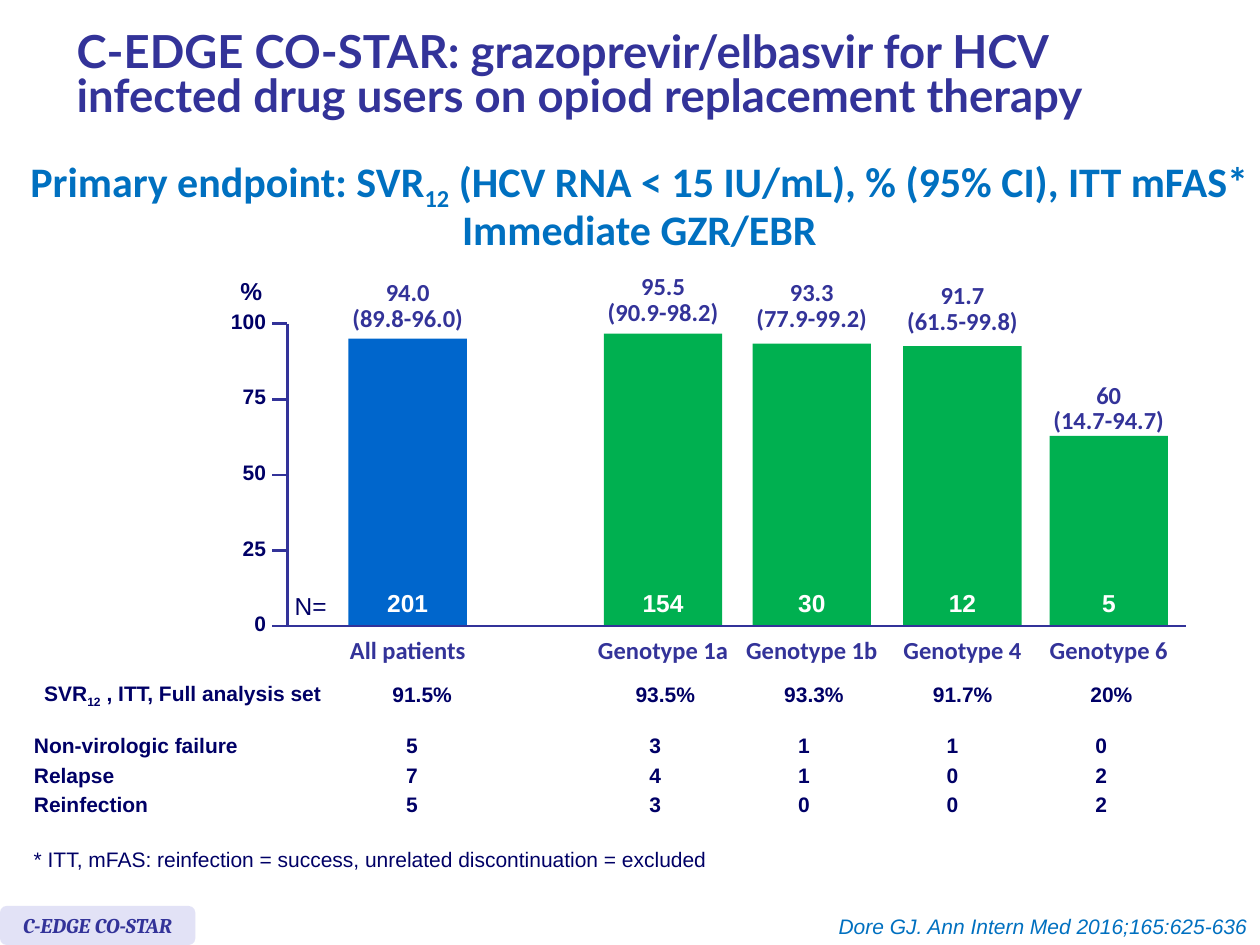
import pptx
import pptx.util
import pptx.dml.color
import pptx.enum.shapes
import pptx.enum.text
import pptx.oxml.ns
from lxml import etree

Pt = pptx.util.Pt
SHAPE = pptx.enum.shapes.MSO_SHAPE
ALIGN = pptx.enum.text.PP_ALIGN
ANCHOR = pptx.enum.text.MSO_ANCHOR
AUTO_SIZE = pptx.enum.text.MSO_AUTO_SIZE

INDIGO = "333399"
NAVY = "000066"
BLUE = "0070C0"
GREEN = "00B050"

AXIS_X = 164.2
AXIS_TOP = 185
TICK_STEP = 43.2
BASELINE = AXIS_TOP + 4 * TICK_STEP
BAR_WIDTH = 67.7
CATEGORY_WIDTH = 80

BARS = [
    ("All patients", "94.0", "(89.8-96.0)", "201", 233, 193.5, 160.4, "0066CC"),
    ("Genotype 1a", "95.5", "(90.9-98.2)", "154", 378.9, 190.7, 156.8, GREEN),
    ("Genotype 1b", "93.3", "(77.9-99.2)", "30", 463.9, 196.4, 160.4, GREEN),
    ("Genotype 4", "91.7", "(61.5-99.8)", "12", 550, 197.8, 162, GREEN),
    ("Genotype 6", "60", "(14.7-94.7)", "5", 633.6, 249.1, 218.9, GREEN),
]
SVR_ROWS = [
    [("SVR", "12", " , ITT, Full analysis set"), "91.5%", "", "93.5%", "93.3%", "91.7%", "20%"],
]
FAILURE_ROWS = [
    ["Non-virologic failure", "5", "", "3", "1", "1", "0"],
    ["Relapse", "7", "", "4", "1", "0", "2"],
    ["Reinfection", "5", "", "3", "0", "0", "2"],
]
COLUMN_WIDTHS = [175.7, 90.7, 51.1, 85, 85, 85, 85]
ROW_HEIGHT = 17.1


def color(hex_code):
    return pptx.dml.color.RGBColor.from_string(hex_code)


def write(paragraph, content, font, size, hex_code, bold=False, italic=False,
          align=ALIGN.LEFT, spacing=None):
    if isinstance(content, str):
        paragraph.text = content
    else:
        for index, part in enumerate(content):
            run = paragraph.add_run()
            run.text = part
            if index % 2:
                run.font._element.set("baseline", "-25000")
    paragraph.alignment = align
    if spacing:
        paragraph.line_spacing = Pt(spacing)
    for run in paragraph.runs:
        run.font.name = font
        run.font.size = Pt(size)
        run.font.bold = bold
        run.font.italic = italic
        run.font.color.rgb = color(hex_code)


def add_text(slide, left, top, width, height, lines, font, size, hex_code,
             inset=True, wrap=False, anchor=ANCHOR.TOP, **style):
    frame = slide.shapes.add_textbox(Pt(left), Pt(top), Pt(width), Pt(height)).text_frame
    frame.word_wrap = wrap
    frame.auto_size = AUTO_SIZE.NONE if wrap else AUTO_SIZE.SHAPE_TO_FIT_TEXT
    frame.vertical_anchor = anchor
    if not inset:
        frame.margin_left = frame.margin_right = 0
        frame.margin_top = frame.margin_bottom = 0
    for index, content in enumerate(lines):
        paragraph = frame.add_paragraph() if index else frame.paragraphs[0]
        write(paragraph, content, font, size, hex_code, **style)


def add_block(slide, preset, left, top, width, height, hex_code):
    block = slide.shapes.add_shape(preset, Pt(left), Pt(top), Pt(width), Pt(height))
    block.shadow.inherit = False
    block.fill.solid()
    block.fill.fore_color.rgb = color(hex_code)
    block.line.fill.background()
    return block


def add_line(slide, x1, y1, x2, y2):
    line = slide.shapes.add_connector(
        pptx.enum.shapes.MSO_CONNECTOR.STRAIGHT, Pt(x1), Pt(y1), Pt(x2), Pt(y2))
    line.line.color.rgb = color(INDIGO)
    line.line.width = Pt(1.5)
    etree.SubElement(line._element.spPr, pptx.oxml.ns.qn("a:effectLst"))


def add_results(slide, left, top, rows):
    results = slide.shapes.add_table(
        len(rows), len(COLUMN_WIDTHS), Pt(left), Pt(top),
        Pt(sum(COLUMN_WIDTHS)), Pt(ROW_HEIGHT * len(rows))).table
    results.first_row = results.horz_banding = False
    for column, width in zip(results.columns, COLUMN_WIDTHS):
        column.width = Pt(width)
    for row_index, row in enumerate(rows):
        results.rows[row_index].height = Pt(ROW_HEIGHT)
        for column_index, content in enumerate(row):
            cell = results.cell(row_index, column_index)
            cell.fill.background()
            cell.vertical_anchor = ANCHOR.MIDDLE
            cell.margin_left = cell.margin_right = Pt(5)
            cell.margin_top = cell.margin_bottom = 0
            paragraph = cell.text_frame.paragraphs[0]
            if content:
                write(paragraph, content, "Arial", 12, NAVY, bold=True,
                      align=ALIGN.CENTER if column_index else ALIGN.LEFT)
            else:
                paragraph._p.get_or_add_endParaRPr().set("sz", "1200")


def add_axes(slide):
    add_line(slide, AXIS_X, AXIS_TOP, AXIS_X, BASELINE)
    add_line(slide, AXIS_X, BASELINE, 677.5, BASELINE)
    for index, value in enumerate(range(100, -1, -25)):
        y = AXIS_TOP + index * TICK_STEP
        add_line(slide, AXIS_X - 8.7, y, AXIS_X, y)
        width = 6.7 * len(str(value))
        add_text(slide, 152 - width, y - 8.8, width, 14.4, [str(value)], "Arial", 12, NAVY,
                 inset=False, bold=True, align=ALIGN.RIGHT)
    add_text(slide, 130.3, 154.1, 27.4, 24.5, ["%"], "Arial", 14, NAVY, bold=True)
    add_text(slide, 161.3, 334.1, 38.2, 24.5, ["N="], "Arial", 14, NAVY, wrap=True)


def add_bar(slide, category, rate, interval, patients, center, top, label_top, hex_code):
    add_block(slide, SHAPE.RECTANGLE, center - BAR_WIDTH / 2, top,
              BAR_WIDTH, BASELINE - top, hex_code)
    centered = {"inset": False, "bold": True, "align": ALIGN.CENTER}
    add_text(slide, center - 32, label_top, 64, 30.2, [rate, interval],
             "Calibri", 14, INDIGO, spacing=14.8, **centered)
    add_text(slide, center - CATEGORY_WIDTH / 2, 362.9, CATEGORY_WIDTH, 17.3, [category],
             "Calibri", 14, INDIGO, **centered)
    width = 7.9 * len(patients)
    add_text(slide, center - width / 2, 336.2, width, 17.3, [patients],
             "Arial", 14, "FFFFFF", **centered)


def add_study_tag(slide):
    tag = add_block(slide, SHAPE.ROUNDED_RECTANGLE, 0, 517.7, 111.6, 22.3, "E2E2F6")
    tag.text_frame.word_wrap = False
    tag.text_frame.vertical_anchor = ANCHOR.MIDDLE
    write(tag.text_frame.paragraphs[0], "C-EDGE CO-STAR", "Cambria", 12, INDIGO,
          bold=True, italic=True, align=ALIGN.CENTER)


def main():
    deck = pptx.Presentation()
    deck.slide_width, deck.slide_height = Pt(720), Pt(540)
    slide = deck.slides.add_slide(deck.slide_layouts[6])

    add_text(slide, 36.7, 5.8, 657.4, 77,
             ["C-EDGE CO-STAR: grazoprevir/elbasvir for HCV infected drug users "
              "on opiod replacement therapy"],
             "Lato", 26, INDIGO, wrap=True, anchor=ANCHOR.MIDDLE, bold=True, spacing=25)
    add_text(slide, 7.9, 94.3, 715, 55.4,
             [("Primary endpoint: SVR", "12", " (HCV RNA < 15 IU/mL), % (95% CI), ITT mFAS*"),
              "Immediate GZR/EBR"],
             "Calibri", 24, BLUE, bold=True, align=ALIGN.CENTER, spacing=23.6)
    for bar in BARS:
        add_bar(slide, *bar)
    add_axes(slide)
    add_results(slide, 20.2, 388.8, SVR_ROWS)
    add_results(slide, 14.4, 417.6, FAILURE_ROWS)
    add_text(slide, 12.2, 480.2, 402.5, 21.6,
             ["* ITT, mFAS: reinfection = success, unrelated discontinuation = excluded"],
             "Arial", 12, NAVY)
    add_study_tag(slide)
    add_text(slide, 470.2, 518.4, 249.8, 21.6, ["Dore GJ. Ann Intern Med 2016;165:625-636"],
             "Arial", 12, BLUE, italic=True, align=ALIGN.RIGHT)
    deck.save("out.pptx")


if __name__ == "__main__":
    main()
